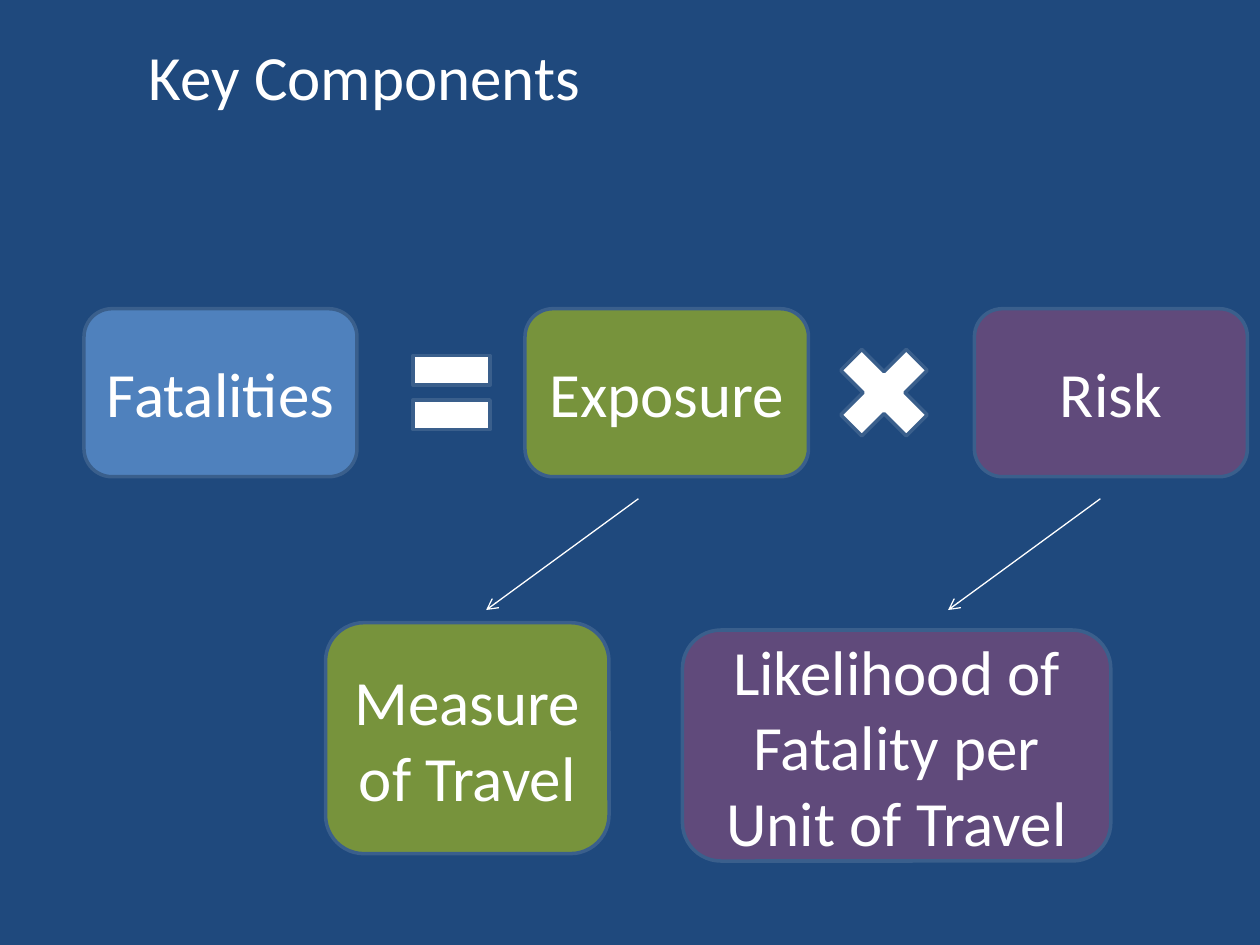
"""Build the Key Components slide: fatalities equal exposure times risk."""
from lxml import etree
from pptx import Presentation, util as u
from pptx.dml.color import RGBColor
from pptx.enum import shapes, text
from pptx.oxml import ns

THEME = {
    "background": "1F497D", "white": "FFFFFF", "outline": "3A5F8C",
    "blue": "4F81BD", "green": "77933C", "purple": "604A7B",
    "font": "Calibri", "size": 36, "outline_width": 2, "arrow_width": 0.75,
}
SLIDE_WIDTH, SLIDE_HEIGHT = u.Inches(10), u.Inches(7.5)
COLUMNS, ROWS = 120, 90

TITLE = ("Key Components", (13, 3, 95, 8.5))
TERM_TOP, TERM_HEIGHT = 29.4, 16
TERMS = [
    ("Fatalities", "blue", 8, 26),
    ("Exposure", "green", 50, 27),
    ("Risk", "purple", 92.8, 26),
]
OPERATOR_HEIGHT = 12
OPERATORS = [("MATH_EQUAL", 38, 10), ("MATH_MULTIPLY", 78.2, 12)]
MEANING_HEIGHT = 22
MEANINGS = [
    ("Measure of Travel", "green", 31, 59.3, 27),
    ("Likelihood of Fatality per Unit of Travel", "purple", 65, 60, 40.8),
]
ARROW_STARTS = [60.8, 104.8]
ARROW_TOP, ARROW_RUN, ARROW_DROP = 47.5, -14.5, 10.6


def place(*cells):
    """Turn alternating column and row counts into slide lengths."""
    units = (SLIDE_WIDTH / COLUMNS, SLIDE_HEIGHT / ROWS)
    return [round(cell * units[index % 2]) for index, cell in enumerate(cells)]


def color(name):
    """Return a theme colour."""
    return RGBColor.from_string(THEME[name])


def set_values(target, values):
    """Set attributes from a dict of format values."""
    for name, value in values.items():
        setattr(target, name, value)


def write(shape, words, paragraph_format, frame_format):
    """Put one styled paragraph in a shape."""
    set_values(shape.text_frame, {"word_wrap": True, **frame_format})
    paragraph = shape.text_frame.paragraphs[0]
    set_values(paragraph, paragraph_format)
    run = paragraph.add_run()
    run.text = words
    set_values(run.font, {"name": THEME["font"], "size": u.Pt(THEME["size"])})
    run.font.color.rgb = color("white")


def add_shape(slide, kind, fill, *cells):
    """Add an outlined preset shape."""
    shape = slide.shapes.add_shape(getattr(shapes.MSO_SHAPE, kind), *place(*cells))
    shape.shadow.inherit = False
    shape.fill.solid()
    shape.fill.fore_color.rgb = color(fill)
    shape.line.color.rgb = color("outline")
    shape.line.width = u.Pt(THEME["outline_width"])
    return shape


def add_box(slide, words, fill, *cells):
    """Add a rounded box with centred words."""
    shape = add_shape(slide, "ROUNDED_RECTANGLE", fill, *cells)
    write(shape, words, {"alignment": text.PP_ALIGN.CENTER},
          {"vertical_anchor": text.MSO_ANCHOR.MIDDLE})


def add_arrow(slide, *cells):
    """Add a thin line with an open arrowhead at its end."""
    arrow = slide.shapes.add_connector(shapes.MSO_CONNECTOR.STRAIGHT, *place(*cells))
    arrow.line.color.rgb = color("white")
    arrow.line.width = u.Pt(THEME["arrow_width"])
    etree.SubElement(arrow.line._get_or_add_ln(), ns.qn("a:tailEnd"), type="arrow")
    etree.SubElement(arrow._element.spPr, ns.qn("a:effectLst"))


def main():
    """Build and save the slide."""
    presentation = Presentation()
    set_values(presentation, {"slide_width": SLIDE_WIDTH, "slide_height": SLIDE_HEIGHT})
    slide = presentation.slides.add_slide(presentation.slide_layouts[6])
    slide.background.fill.solid()
    slide.background.fill.fore_color.rgb = color("background")

    words, cells = TITLE
    write(slide.shapes.add_textbox(*place(*cells)), words, {},
          {"auto_size": text.MSO_AUTO_SIZE.SHAPE_TO_FIT_TEXT})
    for words, fill, left, width in TERMS:
        add_box(slide, words, fill, left, TERM_TOP, width, TERM_HEIGHT)
    operator_top = TERM_TOP + (TERM_HEIGHT - OPERATOR_HEIGHT) / 2
    for kind, left, width in OPERATORS:
        add_shape(slide, kind, "white", left, operator_top, width, OPERATOR_HEIGHT)
    for words, fill, left, top, width in MEANINGS:
        add_box(slide, words, fill, left, top, width, MEANING_HEIGHT)
    for start in ARROW_STARTS:
        add_arrow(slide, start, ARROW_TOP, start + ARROW_RUN, ARROW_TOP + ARROW_DROP)
    presentation.save("out.pptx")


if __name__ == "__main__":
    main()
